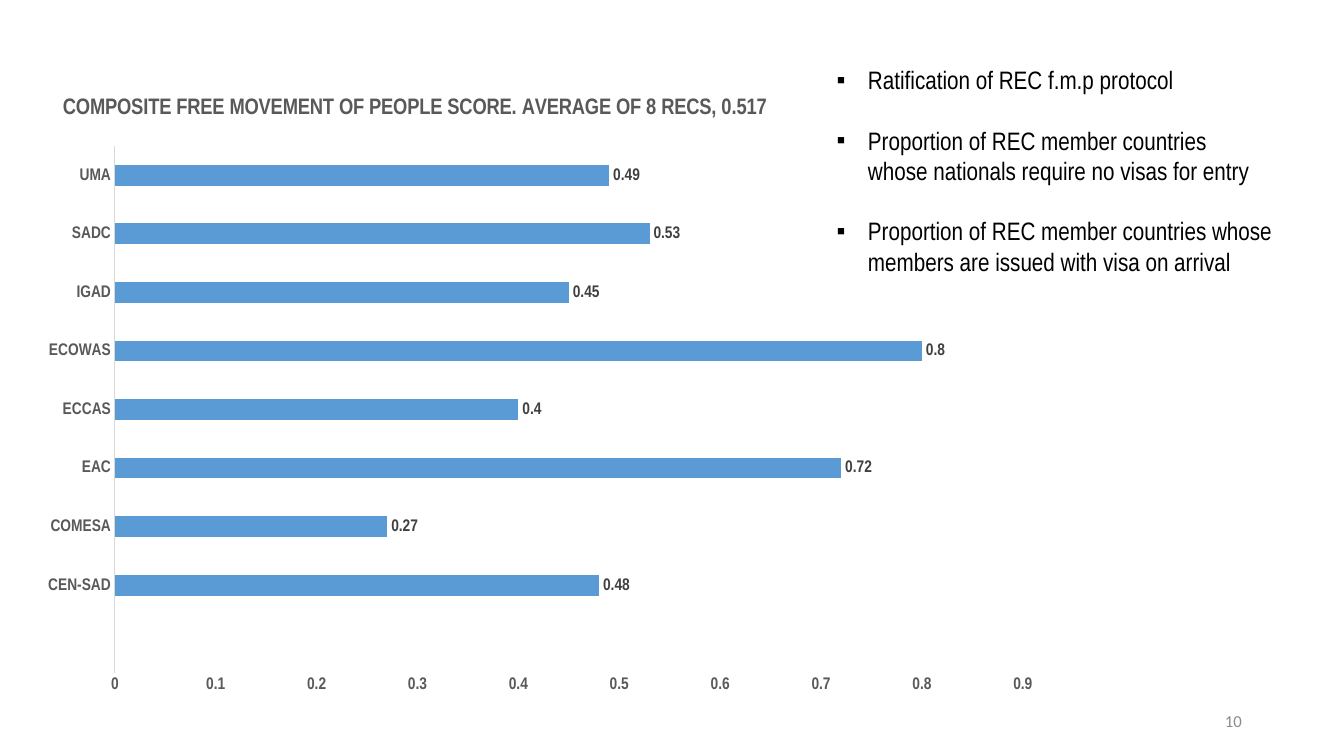
from dataclasses import dataclass

from lxml import etree
from pptx import Presentation
from pptx.chart.data import CategoryChartData
from pptx.dml.color import RGBColor
from pptx.enum.chart import XL_CHART_TYPE, XL_LABEL_POSITION, XL_TICK_MARK
from pptx.enum.text import MSO_ANCHOR, MSO_AUTO_SIZE, PP_ALIGN
from pptx.oxml.ns import qn
from pptx.util import Cm, Pt

BAR_CLUSTERED = XL_CHART_TYPE.BAR_CLUSTERED
OUTSIDE_END = XL_LABEL_POSITION.OUTSIDE_END
NO_TICK = XL_TICK_MARK.NONE
MIDDLE = MSO_ANCHOR.MIDDLE
NO_AUTOFIT = MSO_AUTO_SIZE.NONE
RIGHT = PP_ALIGN.RIGHT


@dataclass(frozen=True)
class Theme:
    narrow: str = "Arial Narrow"
    plain: str = "Calibri"
    ink: str = "000000"
    axis_text: str = "595959"
    label_text: str = "404040"
    axis_line: str = "D9D9D9"
    bar: str = "5B9BD5"
    number_text: str = "8C8C8C"
    title_size: int = 16
    list_size: int = 18
    small_size: int = 12


THEME = Theme()

CHART_TITLE = "COMPOSITE FREE MOVEMENT OF PEOPLE SCORE. AVERAGE OF 8 RECS, 0.517"
SCORES = {
    "": None,
    "CEN-SAD": 0.48,
    "COMESA": 0.27,
    "EAC": 0.72,
    "ECCAS": 0.4,
    "ECOWAS": 0.8,
    "IGAD": 0.45,
    "SADC": 0.53,
    "UMA": 0.49,
}
CRITERIA = [
    "Ratification of REC f.m.p protocol",
    "Proportion of REC member countries\vwhose nationals require no visas for entry",
    "Proportion of REC member countries whose members are issued with visa on arrival",
]


def style_font(font, name, size, color, bold=False):
    font.name = name
    font.size = Pt(size)
    font.bold = bold
    font.color.rgb = RGBColor.from_string(color)


def place_part(parent, **settings):
    layout = parent.find(qn("c:layout"))
    if layout is None:
        layout = etree.Element(qn("c:layout"))
        parent.insert(0, layout)
    manual = etree.SubElement(layout, qn("c:manualLayout"))
    for name, value in settings.items():
        etree.SubElement(manual, qn(f"c:{name}"), val=str(value))


def style_axis(axis):
    axis.has_major_gridlines = False
    axis.major_tick_mark = NO_TICK
    axis.minor_tick_mark = NO_TICK
    style_font(axis.tick_labels.font, THEME.narrow, THEME.small_size, THEME.axis_text, True)


def style_chart_title(chart):
    chart.has_title = True
    title = chart.chart_title
    para = title.text_frame.paragraphs[0]
    para.text = CHART_TITLE
    style_font(para.font, THEME.narrow, THEME.title_size, THEME.axis_text, True)
    place_part(title._element, xMode="edge", yMode="edge", x=0.03, y=0.01)


def add_score_chart(page):
    data = CategoryChartData()
    data.categories = SCORES.keys()
    data.add_series("Series 1", SCORES.values())
    frame = page.shapes.add_chart(
        BAR_CLUSTERED, Cm(0.71), Cm(2.16), Cm(25.81), Cm(15.6), data
    )
    chart = frame.chart
    chart.has_legend = False
    style_font(chart.font, THEME.plain, 10, THEME.ink)
    style_chart_title(chart)

    style_axis(chart.category_axis)
    line = chart.category_axis.format.line
    line.color.rgb = RGBColor.from_string(THEME.axis_line)
    line.width = Pt(0.75)

    scale = chart.value_axis
    style_axis(scale)
    scale.format.line.fill.background()
    scale.minimum_scale, scale.maximum_scale, scale.major_unit = 0, 0.9, 0.1
    scale.tick_labels.number_format = "General"
    scale.tick_labels.number_format_is_linked = False

    plot = chart.plots[0]
    plot.gap_width = 182
    plot.vary_by_categories = False
    fill = plot.series[0].format.fill
    fill.solid()
    fill.fore_color.rgb = RGBColor.from_string(THEME.bar)
    plot.has_data_labels = True
    labels = plot.data_labels
    labels.show_value = True
    labels.position = OUTSIDE_END
    style_font(labels.font, THEME.narrow, THEME.small_size, THEME.label_text, True)

    place_part(
        chart._chartSpace.chart.plotArea,
        layoutTarget="inner", xMode="edge", yMode="edge",
        x=0.0847, y=0.0974, w=0.8866, h=0.8516,
    )


def add_bullet(para):
    properties = para._p.get_or_add_pPr()
    indent = Cm(0.79)
    properties.set("marL", str(indent))
    properties.set("indent", str(-indent))
    etree.SubElement(properties, qn("a:buFont"), typeface="Arial")
    etree.SubElement(properties, qn("a:buChar"), char="▪")


def fill_criteria(box):
    box.left, box.top, box.width, box.height = Cm(20.83), Cm(1.5), Cm(12.29), Cm(6.4)
    text = box.text_frame
    text.auto_size = NO_AUTOFIT
    for index, criterion in enumerate(CRITERIA):
        para = text.paragraphs[0] if index == 0 else text.add_paragraph()
        para.text = criterion
        add_bullet(para)
        para.space_before = Pt(21.6 if index else 0)
        style_font(para.font, THEME.narrow, THEME.list_size, THEME.ink)


def add_page_number(page, number):
    box = page.shapes.add_textbox(Cm(23.93), Cm(17.65), Cm(7.62), Cm(1.02))
    text = box.text_frame
    text.word_wrap = True
    text.vertical_anchor = MIDDLE
    para = text.paragraphs[0]
    para.text = number
    para.alignment = RIGHT
    style_font(para.font, THEME.plain, THEME.small_size, THEME.number_text)


def main():
    deck = Presentation()
    deck.slide_width, deck.slide_height = Cm(33.87), Cm(19.05)
    page = deck.slides.add_slide(deck.slide_layouts[1])
    title, body = page.placeholders
    title._element.getparent().remove(title._element)
    add_score_chart(page)
    fill_criteria(body)
    page.shapes._spTree.append(body._element)
    add_page_number(page, "10")
    deck.save("out.pptx")


if __name__ == "__main__":
    main()
